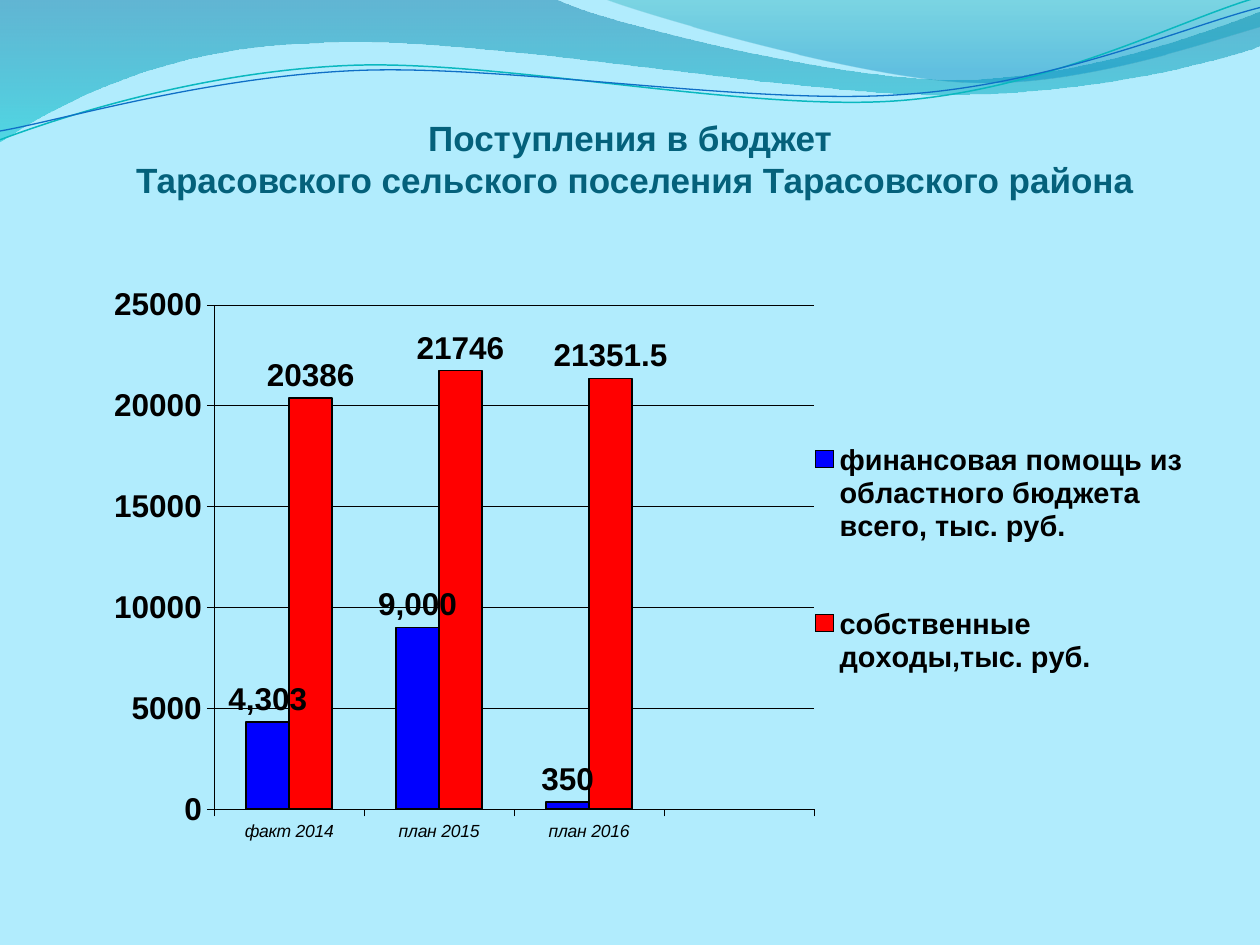
from lxml import etree
from pptx import Presentation
from pptx.chart.data import CategoryChartData
from pptx.dml.color import RGBColor
from pptx.enum.chart import XL_CHART_TYPE as Kind, XL_LABEL_POSITION as Spot
from pptx.enum.chart import XL_LEGEND_POSITION as Side, XL_TICK_MARK as Tick
from pptx.enum.text import MSO_ANCHOR as Anchor, PP_ALIGN as Align
from pptx.oxml import parse_xml
from pptx.oxml.ns import nsdecls, qn
from pptx.util import Inches, Pt

SKY = RGBColor(0xB1, 0xEC, 0xFD)
DEEP = RGBColor(0x00, 0x74, 0xA1)
AQUA = RGBColor(0x00, 0xC6, 0xCF)
TEAL = RGBColor(0x00, 0xA1, 0xA9)
AZURE = RGBColor(0x00, 0x8B, 0xBF)
MINT = RGBColor(0x0A, 0xB8, 0xBF)
NAVY = RGBColor(0x0F, 0x6F, 0xC6)
INK = RGBColor(0x04, 0x61, 0x7B)
BLACK = RGBColor(0, 0, 0)
BLUE = RGBColor(0, 0, 0xFF)
RED = RGBColor(0xFF, 0, 0)
FONT = "Arial"
WIDE, HIGH = 8.87, 4.84

deck = Presentation()
deck.slide_width, deck.slide_height = Inches(10), Inches(7.5)
slide = deck.slides.add_slide(deck.slide_layouts[5])
slide.background.fill.solid()
slide.background.fill.fore_color.rgb = SKY


def add_wave(start, parts, close):
    """Draw a path of lines (2 numbers) and cubic curves (6 numbers)."""
    pen = slide.shapes.build_freeform(Inches(start[0]), Inches(start[1]))
    for part in parts:
        pts = zip(part[::2], part[1::2])
        pen.add_line_segments([(Inches(x), Inches(y)) for x, y in pts], close=False)
    if close:
        pen.add_line_segments([], close=True)
    shape = pen.convert_to_shape()
    shape.shadow.inherit = False
    # Join each three segments of a curve into one cubic segment
    legs = iter(list(shape.element.iter(qn("a:lnTo"))))
    for part in parts:
        trio = [next(legs) for _ in part[::2]]
        if len(trio) == 3:
            bend = etree.Element(qn("a:cubicBezTo"))
            trio[0].addprevious(bend)
            for leg in trio:
                bend.append(leg[0])
                leg.getparent().remove(leg)
    return shape


def set_font(font, size, color=BLACK, bold=True, italic=False):
    font.name, font.size = FONT, Pt(size)
    font.bold, font.italic = bold, italic
    font.color.rgb = color


# Filled waves: start, parts, gradient stops (position, colour, opacity in %)
bands = [
    ((0, 0), [(4.4, -0.01), (4.76, 0.17, 6.64, 0.63, 7.58, 0.63),
              (8.53, 0.63, 9.58, 0.26, 10, 0.09), (10.01, 0.36),
              (9.83, 0.44, 8.7, 0.76, 7.46, 0.75),
              (6.22, 0.75, 3.82, 0.28, 2.57, 0.34),
              (1.29, 0.36, 0.46, 0.83, -0.01, 1.13), (0, 0)],
     [(0, DEEP, 45), (1, AQUA, 55)]),
    ((4.79, -0.01), [(5.09, 0.11, 6.82, 0.62, 7.69, 0.65),
                     (8.56, 0.69, 9.61, 0.32, 10, 0.21), (10, 0), (4.79, -0.01)],
     [(0, TEAL, 30), (0.8, AZURE, 45)]),
]
for start, parts, stops in bands:
    band = add_wave(start, parts, True)
    band.line.fill.background()
    band.fill.gradient()
    band.fill.gradient_angle = 270
    for stop, (pos, color, _) in zip(band.fill.gradient_stops, stops):
        stop.position = pos
        stop.color.rgb = color
    for tag, (_, _, alpha) in zip(band.element.spPr.iter(qn("a:srgbClr")), stops):
        etree.SubElement(tag, qn("a:alpha")).set("val", str(alpha * 1000))

# Thin wave lines
curves = [
    ((0, 1.11), [(0.48, 0.93, 1.58, 0.57, 2.77, 0.52),
                 (3.95, 0.47, 5.93, 0.89, 7.13, 0.8),
                 (8.33, 0.71, 9.38, 0.15, 9.98, -0.02)], MINT, 0.85),
    ((0, 1.04), [(0.47, 0.96, 1.64, 0.61, 2.83, 0.56),
                 (4.03, 0.51, 5.97, 0.84, 7.17, 0.75),
                 (8.36, 0.67, 9.41, 0.21, 10, 0.06)], NAVY, 0.75),
]
for start, parts, color, width in curves:
    curve = add_wave(start, parts, False)
    curve.fill.background()
    curve.line.color.rgb = color
    curve.line.width = Pt(width)

# Title, in front of the waves
title = slide.shapes.title
title.element.getparent().append(title.element)
title.left, title.top = Inches(0.5), Inches(0.77)
title.width, title.height = Inches(9.08), Inches(0.82)
frame = title.text_frame
frame.text = "Поступления в бюджет \vТарасовского сельского поселения Тарасовского района"
frame.word_wrap = True
frame.vertical_anchor = Anchor.BOTTOM
frame.margin_left = frame.margin_right = frame.margin_bottom = 0
frame.margin_top = Inches(0.05)
frame.paragraphs[0].alignment = Align.CENTER
set_font(frame.paragraphs[0].font, 20, INK)

# Chart, with an empty fourth category
data = CategoryChartData()
data.categories = ["факт 2014", "план 2015", "план 2016", ""]
data.add_series("финансовая помощь из областного бюджета всего, тыс. руб.",
                [4303, 9000, 350, None])
data.add_series("собственные доходы,тыс. руб.", [20386, 21746, 21351.5, None])
chart = slide.shapes.add_chart(
    Kind.COLUMN_CLUSTERED, Inches(0.64), Inches(2.19),
    Inches(WIDE), Inches(HIGH), data).chart
chart.has_title = False
set_font(chart.font, 18)
plot = chart.plots[0]
plot.gap_width, plot.overlap = 150, 0
plot.vary_by_categories = False
for row, color, code in zip(plot.series, (BLUE, RED), ("#,##0", "General")):
    row.format.fill.solid()
    row.format.fill.fore_color.rgb = color
    row.format.line.color.rgb = BLACK
    row.format.line.width = Pt(1)
    row.invert_if_negative = False
    tags = row.data_labels
    tags.show_value = True
    tags.position = Spot.OUTSIDE_END
    tags.number_format, tags.number_format_is_linked = code, False
    set_font(tags.font, 18)

# Axes
cat, val = chart.category_axis, chart.value_axis
set_font(cat.tick_labels.font, 10, bold=False, italic=True)
set_font(val.tick_labels.font, 18)
val.tick_labels.number_format = "General"
val.tick_labels.number_format_is_linked = False
val.minimum_scale, val.maximum_scale, val.major_unit = 0, 25000, 5000
val.has_major_gridlines = True
for axis in (cat, val):
    axis.major_tick_mark, axis.minor_tick_mark = Tick.OUTSIDE, Tick.NONE
for part in (cat, val, val.major_gridlines):
    part.format.line.color.rgb = BLACK
    part.format.line.width = Pt(0.25)

# Legend
chart.has_legend = True
key = chart.legend
key.position = Side.RIGHT
key.include_in_layout = False
set_font(key.font, 16.5)

# Fixed places of the plot and the legend, in inches within the chart
places = [("c:plotArea", 0, '<c:layoutTarget val="inner"/>', (1.06, 0.23, 4.76, 4)),
          ("c:legend", 1, "", (5.74, 0.82, 3.1, 2.86))]
for name, index, target, nums in places:
    owner = chart.element.find(".//" + qn(name))
    for old in owner.findall(qn("c:layout")):
        owner.remove(old)
    modes = '<c:xMode val="edge"/><c:yMode val="edge"/>'
    sizes = "".join(f'<c:{tag} val="{num / full}"/>' for tag, num, full
                    in zip("xywh", nums, (WIDE, HIGH) * 2))
    owner.insert(index, parse_xml(
        f'<c:layout {nsdecls("c")}><c:manualLayout>{target}{modes}{sizes}'
        "</c:manualLayout></c:layout>"))

deck.save("out.pptx")
